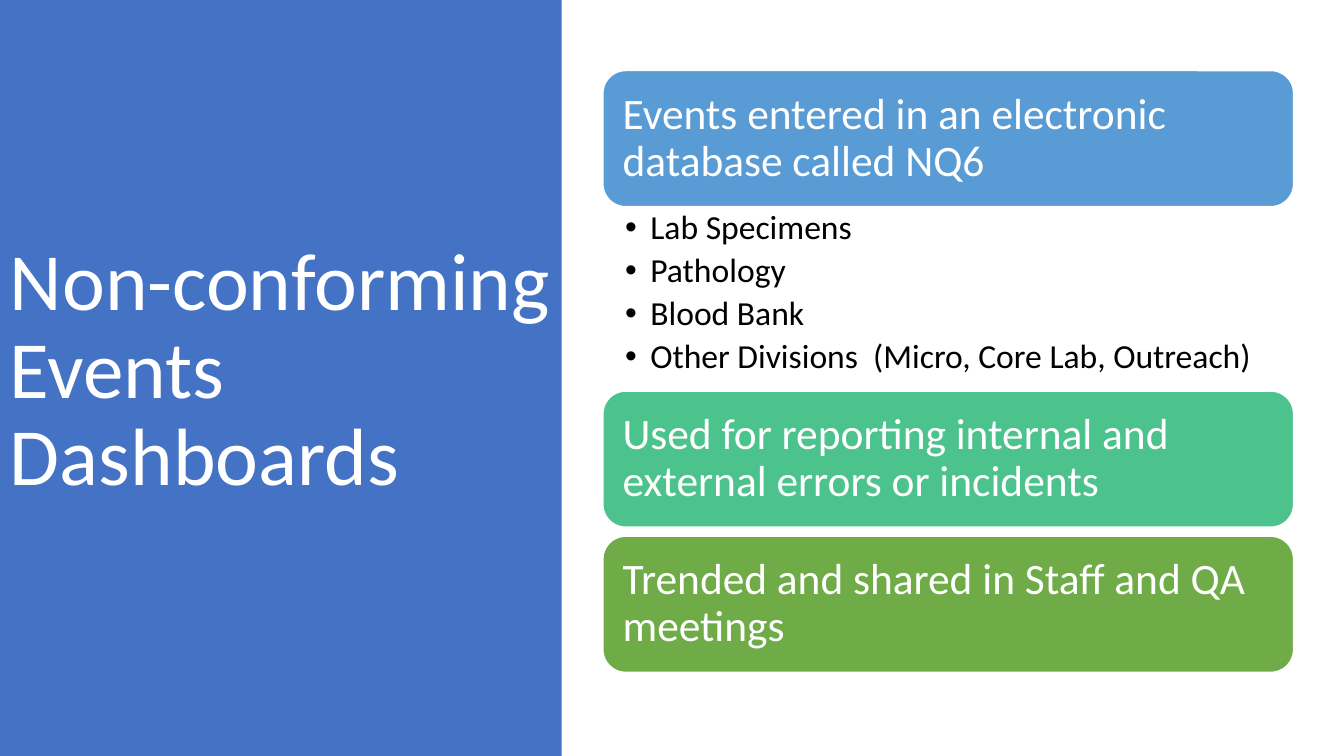
from lxml import etree
from pptx import Presentation
from pptx.dml.color import RGBColor
from pptx.enum.shapes import MSO_SHAPE
from pptx.enum.text import MSO_ANCHOR, PP_ALIGN
from pptx.oxml.ns import qn
from pptx.util import Inches, Pt

WHITE = RGBColor(0xFF, 0xFF, 0xFF)
BLACK = RGBColor(0x00, 0x00, 0x00)
PANEL_BLUE = RGBColor(0x44, 0x72, 0xC4)
SKY_BLUE = RGBColor(0x59, 0x9B, 0xD5)
MINT = RGBColor(0x4C, 0xC3, 0x8C)
GREEN = RGBColor(0x6F, 0xAB, 0x46)

PANEL_WIDTH = 5.57
CARD_LEFT, CARD_WIDTH, CARD_HEIGHT = 5.98, 6.85, 1.35

CARDS = [
    (0.7, SKY_BLUE, "Events entered in an electronic database called NQ6"),
    (3.88, MINT, "Used for reporting internal and external errors or incidents"),
    (5.32, GREEN, "Trended and shared in Staff and QA meetings"),
]
DIVISIONS = [
    "Lab Specimens",
    "Pathology",
    "Blood Bank",
    "Other Divisions  (Micro, Core Lab, Outreach)",
]


def set_up_frame(frame, anchor, left, top, right, bottom):
    """Turn wrapping on and set the anchor and the insets in inches."""
    frame.word_wrap = True
    frame.vertical_anchor = anchor
    frame.margin_left, frame.margin_top = Inches(left), Inches(top)
    frame.margin_right, frame.margin_bottom = Inches(right), Inches(bottom)


def add_bullet(paragraph):
    properties = paragraph._p.get_or_add_pPr()
    properties.set("marL", str(Inches(0.25)))
    properties.set("indent", str(-Inches(0.25)))
    etree.SubElement(properties, qn("a:buFont"), typeface="Arial")
    etree.SubElement(properties, qn("a:buChar"), char="•")


def write_lines(frame, lines, size, color, bulleted=False):
    for index, line in enumerate(lines):
        paragraph = frame.paragraphs[0] if index == 0 else frame.add_paragraph()
        if bulleted:
            add_bullet(paragraph)
            if index:
                paragraph.space_before = Pt(4.8)
        paragraph.alignment = PP_ALIGN.LEFT
        paragraph.line_spacing = 0.9
        run = paragraph.add_run()
        run.text = line
        run.font.name = "Calibri"
        run.font.size = Pt(size)
        run.font.color.rgb = color


def add_filled_shape(slide, kind, left, top, width, height, fill):
    shape = slide.shapes.add_shape(
        kind, Inches(left), Inches(top), Inches(width), Inches(height))
    shape.shadow.inherit = False
    shape.fill.solid()
    shape.fill.fore_color.rgb = fill
    shape.line.fill.background()
    return shape


def add_title(slide):
    title = slide.shapes.add_textbox(
        Inches(0), Inches(0.68), Inches(PANEL_WIDTH), Inches(6.02))
    set_up_frame(title.text_frame, MSO_ANCHOR.MIDDLE, 0.1, 0.05, 0.1, 0.05)
    write_lines(title.text_frame, ["Non-conforming", "Events Dashboards"], 58, WHITE)


def add_card(slide, top, fill, statement):
    card = add_filled_shape(slide, MSO_SHAPE.ROUNDED_RECTANGLE,
                            CARD_LEFT, top, CARD_WIDTH, CARD_HEIGHT, fill)
    card.adjustments[0] = 0.167
    card.line.color.rgb = WHITE
    card.line.width = Pt(1)
    set_up_frame(card.text_frame, MSO_ANCHOR.MIDDLE, 0.13, 0.13, 0.13, 0.13)
    write_lines(card.text_frame, [statement], 31, WHITE)


def add_division_list(slide):
    divisions = slide.shapes.add_textbox(
        Inches(CARD_LEFT), Inches(2.05), Inches(CARD_WIDTH), Inches(1.82))
    set_up_frame(divisions.text_frame, MSO_ANCHOR.TOP, 0.22, 0.04, 0.24, 0.04)
    write_lines(divisions.text_frame, DIVISIONS, 24, BLACK, bulleted=True)


def main():
    presentation = Presentation()
    presentation.slide_width = Inches(13.33)
    presentation.slide_height = Inches(7.5)
    slide = presentation.slides.add_slide(presentation.slide_layouts[6])

    add_filled_shape(slide, MSO_SHAPE.RECTANGLE, 0, 0, PANEL_WIDTH, 7.5, PANEL_BLUE)
    add_title(slide)
    for top, fill, statement in CARDS:
        add_card(slide, top, fill, statement)
    add_division_list(slide)

    presentation.save("out.pptx")


if __name__ == "__main__":
    main()
